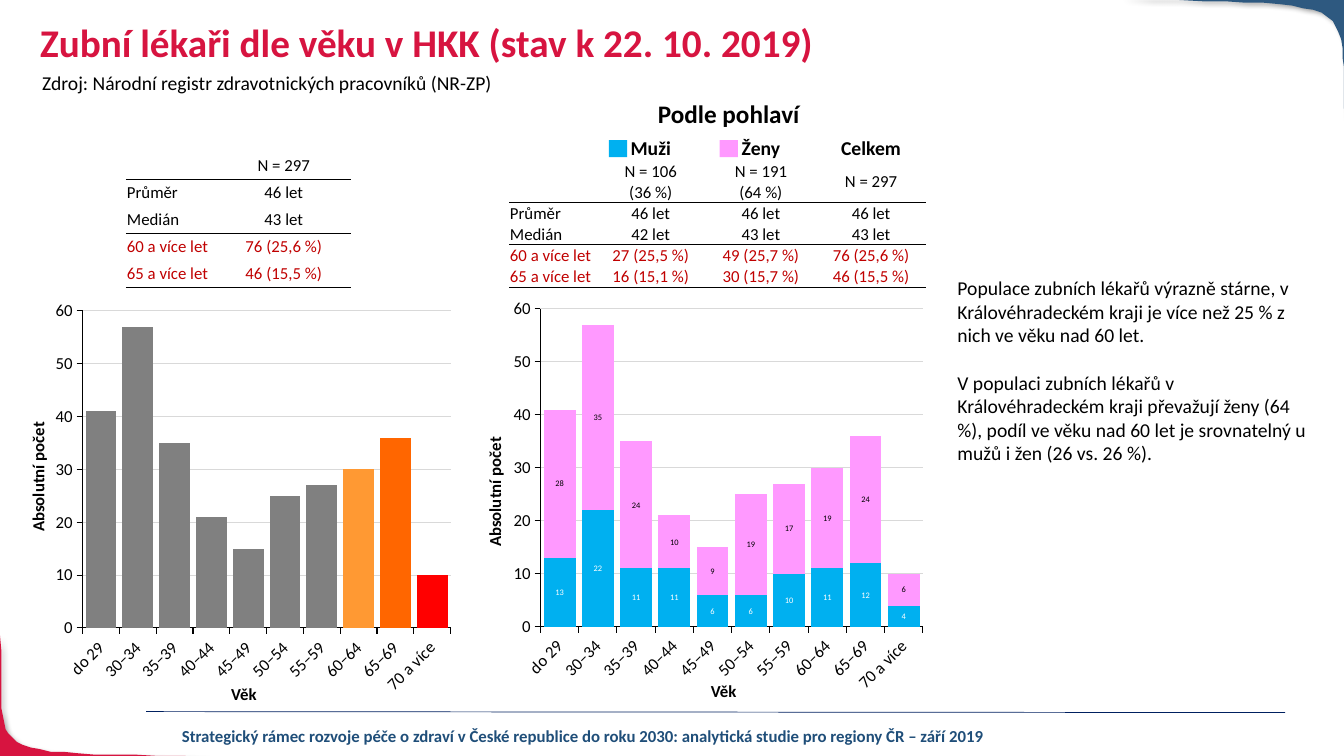
from lxml.etree import SubElement
from pptx import Presentation
from pptx.chart.data import CategoryChartData
from pptx.dml.color import RGBColor as RGB
from pptx.enum.chart import XL_CHART_TYPE as ChartType, XL_TICK_MARK as Tick
from pptx.enum.shapes import MSO_CONNECTOR as Connector, MSO_SHAPE as Shape
from pptx.enum.text import MSO_ANCHOR as Anchor, PP_ALIGN as Align
from pptx.oxml import parse_xml
from pptx.oxml.ns import nsdecls, qn
from pptx.util import Pt

TITLE = "Zubní lékaři dle věku v HKK (stav k 22. 10. 2019)"
SOURCE = "Zdroj: Národní registr zdravotnických pracovníků (NR-ZP)"
FOOTER = ("Strategický rámec rozvoje péče o zdraví v České republice do roku 2030: "
          "analytická studie pro regiony ČR – září 2019")
BY_SEX = "Podle pohlaví"
COMMENTS = [
    "Populace zubních lékařů výrazně stárne, v Královéhradeckém kraji je více než 25 % "
    "z nich ve věku nad 60 let.",
    "V populaci zubních lékařů v Královéhradeckém kraji převažují ženy (64 %), podíl ve věku "
    "nad 60 let je srovnatelný u mužů i žen (26 vs. 26 %).",
]
AGES = ["do 29", "30–34", "35–39", "40–44", "45–49", "50–54", "55–59", "60–64", "65–69", "70 a více"]
MEN = [13, 22, 11, 11, 6, 6, 10, 11, 12, 4]
WOMEN = [28, 35, 24, 10, 9, 19, 17, 19, 24, 6]
TOTAL = [men + women for men, women in zip(MEN, WOMEN)]
TOTAL_STATS = [
    ["", "N = 297"],
    ["Průměr", "46 let"],
    ["Medián", "43 let"],
    ["60 a více let", "76 (25,6 %)"],
    ["65 a více let", "46 (15,5 %)"],
]
SEX_STATS = [
    ["", "Muži", "Ženy", "Celkem"],
    ["", "N = 106\v(36 %)", "N = 191\v(64 %)", "N = 297"],
    ["Průměr", "46 let", "46 let", "46 let"],
    ["Medián", "42 let", "43 let", "43 let"],
    ["60 a více let", "27 (25,5 %)", "49 (25,7 %)", "76 (25,6 %)"],
    ["65 a více let", "16 (15,1 %)", "30 (15,7 %)", "46 (15,5 %)"],
]
THEME = {
    "font": "Calibri", "text": "000000", "title": "D71440", "footer": "1F4E79", "risk": "C00000",
    "corner": "2E5980", "rule": "002060", "grid": "D9D9D9", "white": "FFFFFF",
    "men": "00B0F0", "women": "FF99FF", "total": "808080",
    "older": {7: "FF9933", 8: "FF6600", 9: "FF0000"},
    "title_size": 28, "heading": 18, "body": 14, "small": 12, "label": 6,
}
CORNERS = [
    ("title", [(153.4, 540.7), (-24.5, 535.7), (5.8, 546.5), (0, 453.6)], (-0.7, 540.7)),
    ("corner", [(799.9, -0.7), (986.4, 5), (954.7, -7.2), (961.2, 102.2)], (961.2, -0.7)),
]


def color(name):
    return RGB.from_string(THEME[name])


def assign(target, values):
    for name, value in values.items():
        setattr(target, name, value)


def style_font(font, size="small", tint="text", bold=False):
    assign(font, {"name": THEME["font"], "size": Pt(THEME[size]), "bold": bold})
    font.color.rgb = color(tint)


def add_text(box, paragraphs, size, tint="text", bold=False, align=Align.LEFT,
             wrap=True, rotation=0, spacing=None, gap=0):
    holder = slide.shapes.add_textbox(*map(Pt, box))
    holder.rotation = rotation
    holder.text_frame.word_wrap = wrap
    for index, words in enumerate(paragraphs):
        paragraph = holder.text_frame.paragraphs[0] if index == 0 else holder.text_frame.add_paragraph()
        assign(paragraph, {"text": words, "alignment": align, "line_spacing": spacing})
        if index:
            paragraph.space_before = Pt(gap)
        style_font(paragraph.runs[0].font, size, tint, bold)


def add_corner(tint, curve, tip):
    points = []
    for step in range(25):
        t = step / 24
        weights = ((1 - t) ** 3, 3 * t * (1 - t) ** 2, 3 * t * t * (1 - t), t ** 3)
        points.append([sum(w * p[axis] for w, p in zip(weights, curve)) for axis in (0, 1)])
    builder = slide.shapes.build_freeform(*points[0], scale=Pt(1))
    builder.add_line_segments(points[1:] + [tip], close=True)
    corner = builder.convert_to_shape()
    corner.fill.solid()
    corner.fill.fore_color.rgb = color(tint)
    corner.line.fill.background()
    effects = SubElement(corner.element.spPr, qn("a:effectLst"))
    shadow = SubElement(effects, qn("a:outerShdw"), blurRad=str(Pt(4)), dist=str(Pt(3)), dir="2700000")
    black = SubElement(shadow, qn("a:srgbClr"), val=THEME["text"])
    SubElement(black, qn("a:alpha"), val="40000")


def add_stats(left, top, widths, heights, stats, ruled, heading_row=None):
    table = slide.shapes.add_table(len(heights), len(widths), Pt(left), Pt(top),
                                   Pt(sum(widths)), Pt(sum(heights))).table
    assign(table, {"first_row": False, "horz_banding": False})
    table._tbl.tblPr.find(qn("a:tableStyleId")).text = "{2D5ABB26-0587-4C30-8999-92F81FD0307C}"
    for column, width in zip(table.columns, widths):
        column.width = Pt(width)
    for r, (row, height) in enumerate(zip(table.rows, heights)):
        row.height = Pt(height)
        heading = r == heading_row
        tint = "risk" if r >= len(stats) - 2 else "text"
        size = "body" if heading else "small"
        for c, cell in enumerate(row.cells):
            assign(cell, {"margin_left": Pt(0.7), "margin_right": Pt(0.7), "margin_top": Pt(0.7),
                          "margin_bottom": 0, "vertical_anchor": Anchor.MIDDLE})
            cell.fill.background()
            paragraph = cell.text_frame.paragraphs[0]
            assign(paragraph, {"text": stats[r][c], "alignment": Align.CENTER if c else Align.LEFT})
            for run in paragraph.runs:
                style_font(run.font, size, tint, heading)
            for line_break in paragraph._p.findall(qn("a:br")):
                SubElement(line_break, qn("a:rPr"), sz=str(THEME[size] * 100))
            if not stats[r][c]:
                SubElement(paragraph._p, qn("a:endParaRPr"), sz=str(THEME[size] * 100))
            if r in ruled:
                cell._tc.get_or_add_tcPr().insert(0, parse_xml(
                    f'<a:lnB {nsdecls("a")} w="{Pt(1)}"><a:solidFill>'
                    f'<a:srgbClr val="{THEME["text"]}"/></a:solidFill></a:lnB>'))


def add_ages_chart(box, kind, groups):
    ages = CategoryChartData()
    ages.categories = AGES
    for name, counts, _, _ in groups:
        ages.add_series(name, counts)
    chart = slide.shapes.add_chart(kind, *map(Pt, box), ages).chart
    assign(chart, {"has_legend": False, "has_title": False})
    style_font(chart.font)
    plot = chart.plots[0]
    assign(plot, {"gap_width": 20, "vary_by_categories": False,
                  "overlap": 100 if kind == ChartType.COLUMN_STACKED else 0})
    for series, (_, _, tint, label_tint) in zip(plot.series, groups):
        series.format.fill.solid()
        series.format.fill.fore_color.rgb = color(tint)
        if label_tint:
            series.data_labels.show_value = True
            style_font(series.data_labels.font, "label", label_tint)
    for axis in (chart.category_axis, chart.value_axis):
        assign(axis, {"major_tick_mark": Tick.OUTSIDE, "minor_tick_mark": Tick.NONE})
        axis.format.line.width = Pt(0.75)
        axis.format.line.color.rgb = color("text")
        style_font(axis.tick_labels.font)
    chart.category_axis._element.find(qn("c:txPr")).find(qn("a:bodyPr")).set("rot", "-2700000")
    assign(chart.value_axis, {"minimum_scale": 0, "maximum_scale": 60, "major_unit": 10,
                              "has_major_gridlines": True})
    grid = chart.value_axis.major_gridlines.format.line
    grid.width = Pt(0.75)
    grid.color.rgb = color("grid")
    area = chart._chartSpace.chart.plotArea
    for stale in area.findall(qn("c:layout")):
        area.remove(stale)
    area.insert(0, parse_xml(
        f'<c:layout {nsdecls("c")}><c:manualLayout><c:layoutTarget val="inner"/>'
        '<c:xMode val="edge"/><c:yMode val="edge"/><c:x val="0.083"/><c:y val="0.043"/>'
        '<c:w val="0.895"/><c:h val="0.775"/></c:manualLayout></c:layout>'))
    return plot


deck = Presentation()
assign(deck, {"slide_width": Pt(960), "slide_height": Pt(540)})
slide = deck.slides.add_slide(deck.slide_layouts[6])

for corner_parts in CORNERS:
    add_corner(*corner_parts)
footer_rule = slide.shapes.add_connector(Connector.STRAIGHT, Pt(104.4), Pt(508.3), Pt(918), Pt(509))
footer_rule.line.width = Pt(0.5)
footer_rule.line.color.rgb = color("rule")
SubElement(footer_rule._element.spPr, qn("a:effectLst"))

add_text((121, 514.8, 591, 21.6), [FOOTER], "small", "footer", True, Align.CENTER)
add_text((23, 46.8, 828, 24.5), [SOURCE], "body")
add_text((21.6, 13, 859.7, 49.7), [TITLE], "title_size", "title", True, spacing=0.9)
add_text((676.8, 193.7, 265.7, 238.3), COMMENTS, "body", gap=17)
add_text((374.4, 67, 292.3, 28.8), [BY_SEX], "heading", bold=True, align=Align.CENTER)

total_plot = add_ages_chart((34.6, 209.5, 293.8, 292.3), ChartType.COLUMN_CLUSTERED,
                            [("Celkem", TOTAL, "total", None)])
for age, tint in THEME["older"].items():
    older_fill = total_plot.series[0].points[age].format.fill
    older_fill.solid()
    older_fill.fore_color.rgb = RGB.from_string(tint)
add_ages_chart((360.7, 208.1, 305.3, 293), ChartType.COLUMN_STACKED,
               [("Muži", MEN, "men", "white"), ("Ženy", WOMEN, "women", "text")])

for age_left, age_top, count_left, count_top in ((157.7, 484.6, -20.2, 329.8), (500.4, 482.4, 306, 340.6)):
    for words, box, rotation in (("Věk", (age_left, age_top, 33.1, 21.6), 0),
                                 ("Absolutní počet", (count_left, count_top, 94.3, 21.6), 270)):
        add_text(box, [words], "small", bold=True, align=Align.CENTER, wrap=False, rotation=rotation)

add_stats(90, 108.7, [64.8, 95.8], [19.3] * 5, TOTAL_STATS, {0, 2, 4})
add_stats(363.6, 97.2, [61.9] + [78.7] * 3, [17.3, 30] + [15.1] * 4, SEX_STATS, {1, 3, 5}, heading_row=0)

for index, sex in enumerate(("men", "women")):
    key = slide.shapes.add_shape(Shape.RECTANGLE, Pt(434.9 + index * 79.2), Pt(100.1), Pt(13), Pt(12.2))
    key.shadow.inherit = False
    key.fill.solid()
    key.fill.fore_color.rgb = color(sex)
    key.line.fill.background()

deck.save("out.pptx")
